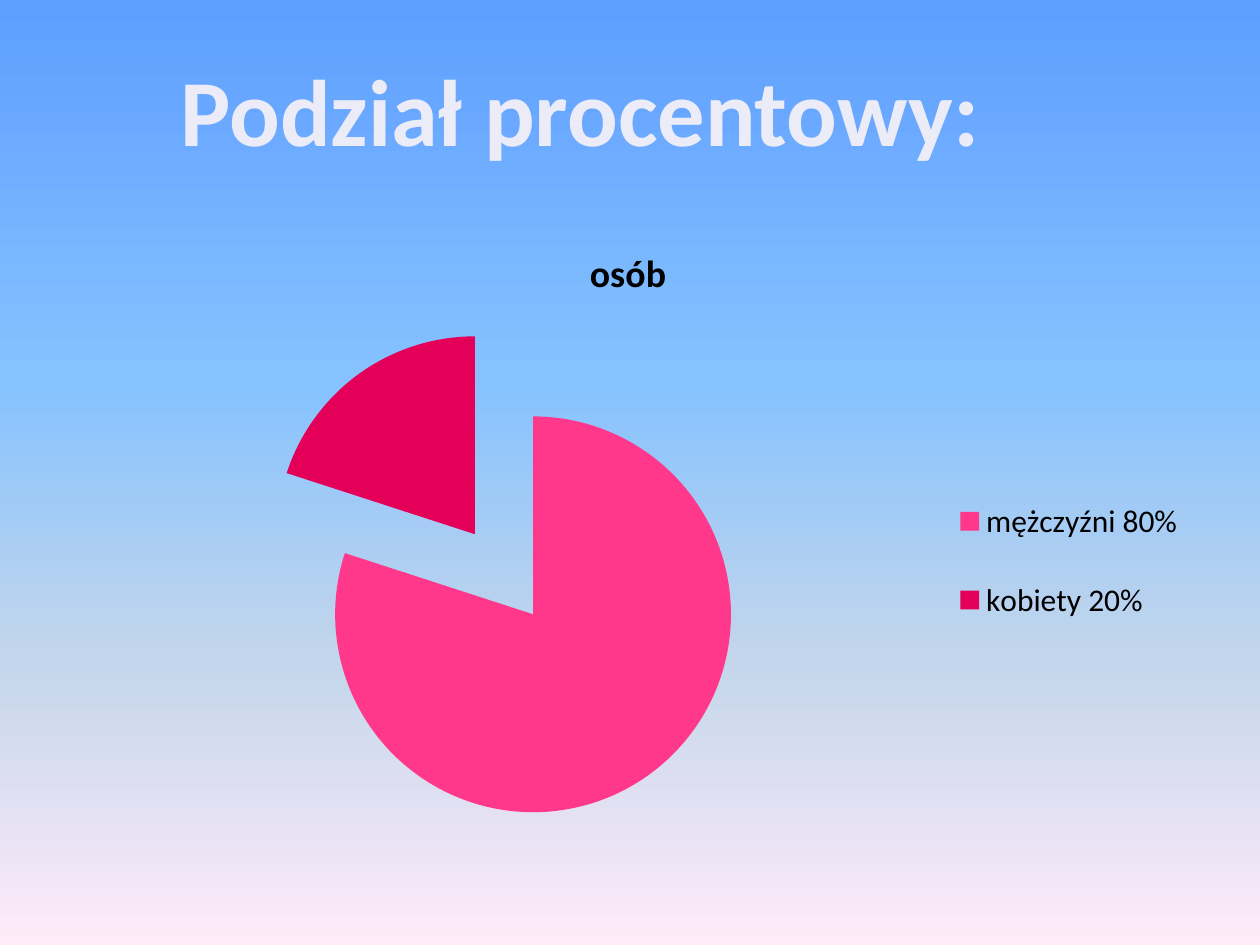
"""Build a slide with an exploded pie chart of the percentage split."""
from copy import deepcopy

from lxml.etree import SubElement
from pptx import Presentation
from pptx.chart.data import CategoryChartData
from pptx.dml.color import RGBColor
from pptx.enum.chart import XL_CHART_TYPE, XL_LEGEND_POSITION
from pptx.enum.text import MSO_ANCHOR, MSO_AUTO_SIZE, PP_ALIGN
from pptx.oxml.ns import qn
from pptx.util import Inches, Pt

HEADING = "Podział procentowy:"
SERIES_NAME = "osób"
BLACK = RGBColor(0x00, 0x00, 0x00)
PALE = RGBColor(0xEB, 0xEC, 0xF7)
NAVY = RGBColor(0x00, 0x26, 0x75)
SLICES = [
    ("mężczyźni 80%", 80, RGBColor(0xFF, 0x38, 0x8C)),
    ("kobiety 20%", 20, RGBColor(0xE4, 0x00, 0x59)),
]
SKY = [
    (0, RGBColor(0x5E, 0x9E, 0xFF)),
    (0.4, RGBColor(0x85, 0xC2, 0xFF)),
    (0.7, RGBColor(0xC4, 0xD6, 0xEB)),
    (1, RGBColor(0xFF, 0xEB, 0xFA)),
]
LEGEND_LAYOUT = {
    "xMode": "edge", "yMode": "edge",
    "x": 0.78, "y": 0.39, "w": 0.22, "h": 0.32,
}
FONT = "Calibri"


def style(font, size, color, bold=False):
    font.name = FONT
    font.size = Pt(size)
    font.bold = bold
    font.color.rgb = color


def paint_background(slide):
    fill = slide.background.fill
    fill.gradient()
    fill.gradient_angle = 270
    stop_list = slide.background._cSld.find(".//" + qn("a:gsLst"))
    while len(stop_list) < len(SKY):
        stop_list.append(deepcopy(stop_list[0]))
    for stop, (position, color) in zip(fill.gradient_stops, SKY):
        stop.position = position
        stop.color.rgb = color


def add_legend(chart):
    chart.has_legend = True
    legend = chart.legend
    legend.position = XL_LEGEND_POSITION.RIGHT
    legend.include_in_layout = False
    style(legend.font, 18, BLACK)
    element = legend._element
    for old_layout in element.findall(qn("c:layout")):
        element.remove(old_layout)
    layout = SubElement(element, qn("c:layout"))
    manual = SubElement(layout, qn("c:manualLayout"))
    for name, value in LEGEND_LAYOUT.items():
        SubElement(manual, qn(f"c:{name}"), val=str(value))
    element.find(qn("c:legendPos")).addnext(layout)


def add_pie(slide):
    data = CategoryChartData()
    data.categories = [name for name, _, _ in SLICES]
    data.add_series(SERIES_NAME, [value for _, value, _ in SLICES])
    chart = slide.shapes.add_chart(
        XL_CHART_TYPE.PIE_EXPLODED,
        Inches(0.5), Inches(1.75), Inches(8.97), Inches(4.91), data,
    ).chart
    style(chart.font, 18, BLACK)
    chart.has_title = True
    chart.chart_title.include_in_layout = False
    title = chart.chart_title.text_frame
    title.text = SERIES_NAME
    style(title.paragraphs[0].runs[0].font, 21.6, BLACK, bold=True)
    add_legend(chart)
    plot = chart.plots[0]
    plot.vary_by_categories = True
    for index, (_, _, color) in enumerate(SLICES):
        fill = plot.series[0].points[index].format.fill
        fill.solid()
        fill.fore_color.rgb = color


def add_heading(slide):
    box = slide.shapes.add_textbox(Inches(1.3), Inches(0.36), Inches(6.61), Inches(1.01))
    frame = box.text_frame
    frame.text = HEADING
    frame.word_wrap = False
    frame.auto_size = MSO_AUTO_SIZE.SHAPE_TO_FIT_TEXT
    frame.vertical_anchor = MSO_ANCHOR.TOP
    para = frame.paragraphs[0]
    para.alignment = PP_ALIGN.CENTER
    span = para.runs[0]
    style(span.font, 54, PALE, bold=True)
    properties = span._r.get_or_add_rPr()
    outline = SubElement(properties, qn("a:ln"), w=str(Pt(2.48)))
    SubElement(SubElement(outline, qn("a:solidFill")), qn("a:srgbClr"), val=str(NAVY))
    properties.insert(0, outline)


def main():
    deck = Presentation()
    deck.slide_width, deck.slide_height = Inches(10), Inches(7.5)
    slide = deck.slides.add_slide(deck.slide_layouts[6])
    paint_background(slide)
    add_pie(slide)
    add_heading(slide)
    deck.save("out.pptx")


if __name__ == "__main__":
    main()
